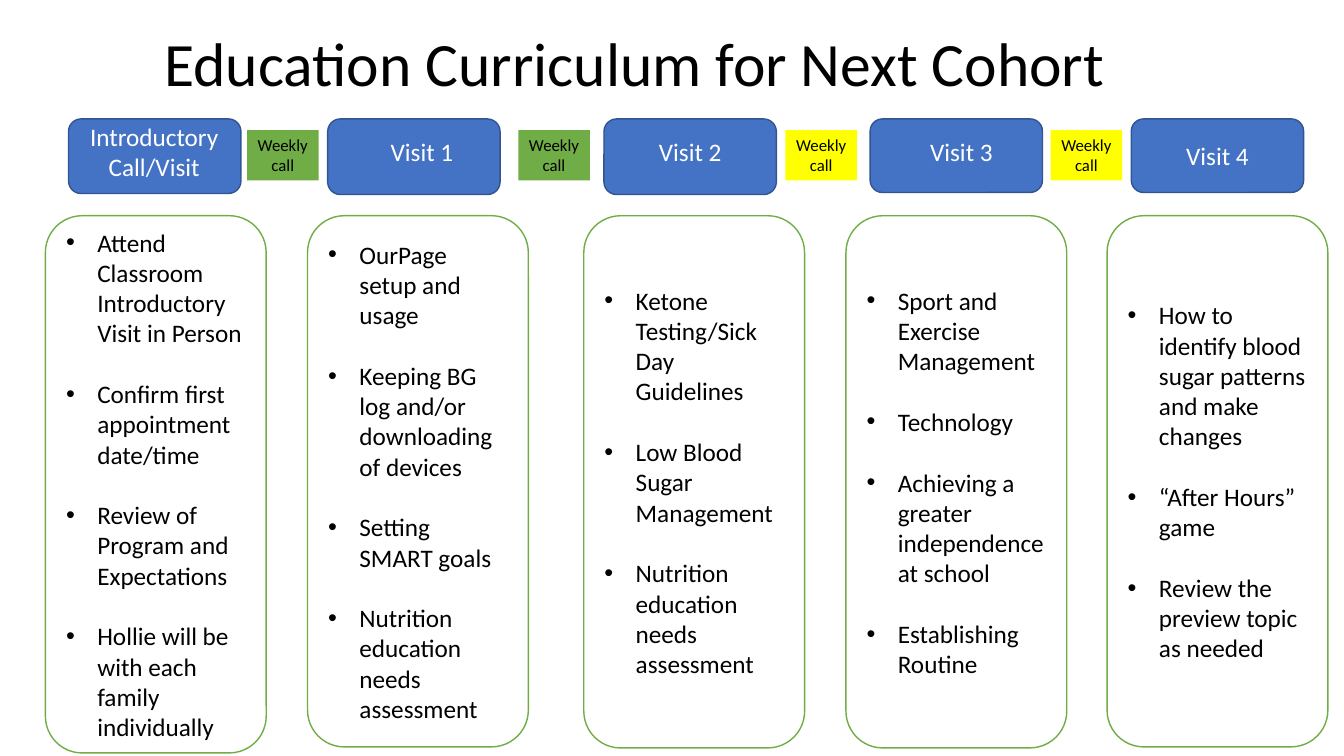
from lxml import etree
from pptx import Presentation
from pptx.dml.color import RGBColor
from pptx.enum.shapes import MSO_SHAPE
from pptx.enum.text import MSO_ANCHOR, PP_ALIGN
from pptx.oxml.ns import qn
from pptx.util import Inches, Pt

ROUNDED, RECTANGLE = MSO_SHAPE.ROUNDED_RECTANGLE, MSO_SHAPE.RECTANGLE
LEFT, CENTER = PP_ALIGN.LEFT, PP_ALIGN.CENTER
TOP, MIDDLE = MSO_ANCHOR.TOP, MSO_ANCHOR.MIDDLE

COLORS = {
    "blue": "4472C4",
    "navy": "325491",
    "green": "70AD47",
    "yellow": "FFFF00",
    "white": "FFFFFF",
    "black": "000000",
}

# header (left, height), label (text, left, top, width, height), card (left, height), topics
SESSIONS = [
    ((0.68, 0.74), ("Introductory Call/Visit", 0.68, 1.15, 1.7, 0.71), (0.45, 5.33),
     ["Attend Classroom Introductory Visit in Person",
      "Confirm first appointment date/time",
      "Review of Program and Expectations",
      "Hollie will be with each family individually"]),
    ((3.25, 0.75), ("Visit 1", 3.7, 1.3, 0.97, 0.4), (3.05, 5.27),
     ["OurPage setup and usage",
      "Keeping BG log and/or downloading of devices",
      "Setting SMART goals",
      "Nutrition education needs assessment"]),
    ((5.99, 0.75), ("Visit 2", 6.4, 1.3, 0.89, 0.4), (5.79, 5.28),
     ["Ketone Testing/Sick Day Guidelines",
      "Low Blood Sugar Management",
      "Nutrition education needs assessment"]),
    ((8.63, 0.73), ("Visit 3", 9.06, 1.3, 0.95, 0.4), (8.39, 5.28),
     ["Sport and Exercise Management",
      "Technology",
      "Achieving a greater independence at school",
      "Establishing Routine"]),
    ((11.22, 0.73), ("Visit 4", 11.61, 1.34, 0.93, 0.4), (10.98, 5.27),
     ["How to identify blood sugar patterns and make changes",
      "“After Hours” game",
      "Review the preview topic as needed"]),
]
WEEKLY_CALLS = [(2.45, "green"), (5.14, "green"), (7.79, "yellow"), (10.42, "yellow")]


class CurriculumSlide:
    font = "Calibri"

    def __init__(self, slide):
        self.shapes = slide.shapes

    def color(self, name):
        return RGBColor.from_string(COLORS[name])

    def style(self, paragraph, text, size, color, align=LEFT):
        paragraph.text = text
        paragraph.alignment = align
        paragraph.font.name = self.font
        paragraph.font.size = Pt(size)
        paragraph.font.color.rgb = self.color(color)

    def box(self, kind, left, top, width, height, fill, line=None):
        box = self.shapes.add_shape(
            kind, Inches(left), Inches(top), Inches(width), Inches(height))
        box.shadow.inherit = False
        box.fill.solid()
        box.fill.fore_color.rgb = self.color(fill)
        if line:
            box.line.color.rgb = self.color(line)
            box.line.width = Pt(1)
        else:
            box.line.fill.background()
        return box

    def label(self, text, left, top, width, height, size=18, color="white",
              align=CENTER, anchor=TOP):
        label = self.shapes.add_textbox(
            Inches(left), Inches(top), Inches(width), Inches(height))
        frame = label.text_frame
        frame.word_wrap = True
        frame.vertical_anchor = anchor
        self.style(frame.paragraphs[0], text, size, color, align)

    def header(self, left, height):
        self.box(ROUNDED, left, 1.18, 1.71, height, "blue", "navy")

    def weekly_call(self, left, fill):
        call = self.box(RECTANGLE, left, 1.29, 0.71, 0.5, fill)
        frame = call.text_frame
        frame.margin_left = frame.margin_right = Inches(0.05)
        self.style(frame.paragraphs[0], "Weekly call", 12, "black", CENTER)

    def topic_card(self, left, height, topics):
        card = self.box(ROUNDED, left, 2.14, 2.19, height, "white", "green")
        frame = card.text_frame
        frame.vertical_anchor = MIDDLE
        for index, topic in enumerate(topics):
            paragraph = frame.add_paragraph() if index else frame.paragraphs[0]
            self.style(paragraph, topic, 18, "black")
            if index:
                paragraph.space_before = Pt(21.75)
            self.bullet(paragraph)

    def bullet(self, paragraph):
        properties = paragraph._p.get_or_add_pPr()
        properties.set("marL", str(Inches(0.31)))
        properties.set("indent", str(Inches(-0.31)))
        mark_font = etree.Element(qn("a:buFont"), typeface="Arial")
        mark = etree.Element(qn("a:buChar"), char="•")
        run_defaults = properties.find(qn("a:defRPr"))
        run_defaults.addprevious(mark_font)
        run_defaults.addprevious(mark)


def main():
    deck = Presentation()
    deck.slide_width, deck.slide_height = Inches(13.33), Inches(7.5)
    page = CurriculumSlide(deck.slides.add_slide(deck.slide_layouts[6]))

    page.label("Education Curriculum for Next Cohort", 1.53, -0.11, 11.5, 1.45,
               size=44, color="black", align=LEFT, anchor=MIDDLE)
    for header, label, card, topics in SESSIONS:
        page.header(*header)
        page.label(*label)
        page.topic_card(*card, topics)
    for left, fill in WEEKLY_CALLS:
        page.weekly_call(left, fill)

    deck.save("out.pptx")


if __name__ == "__main__":
    main()
